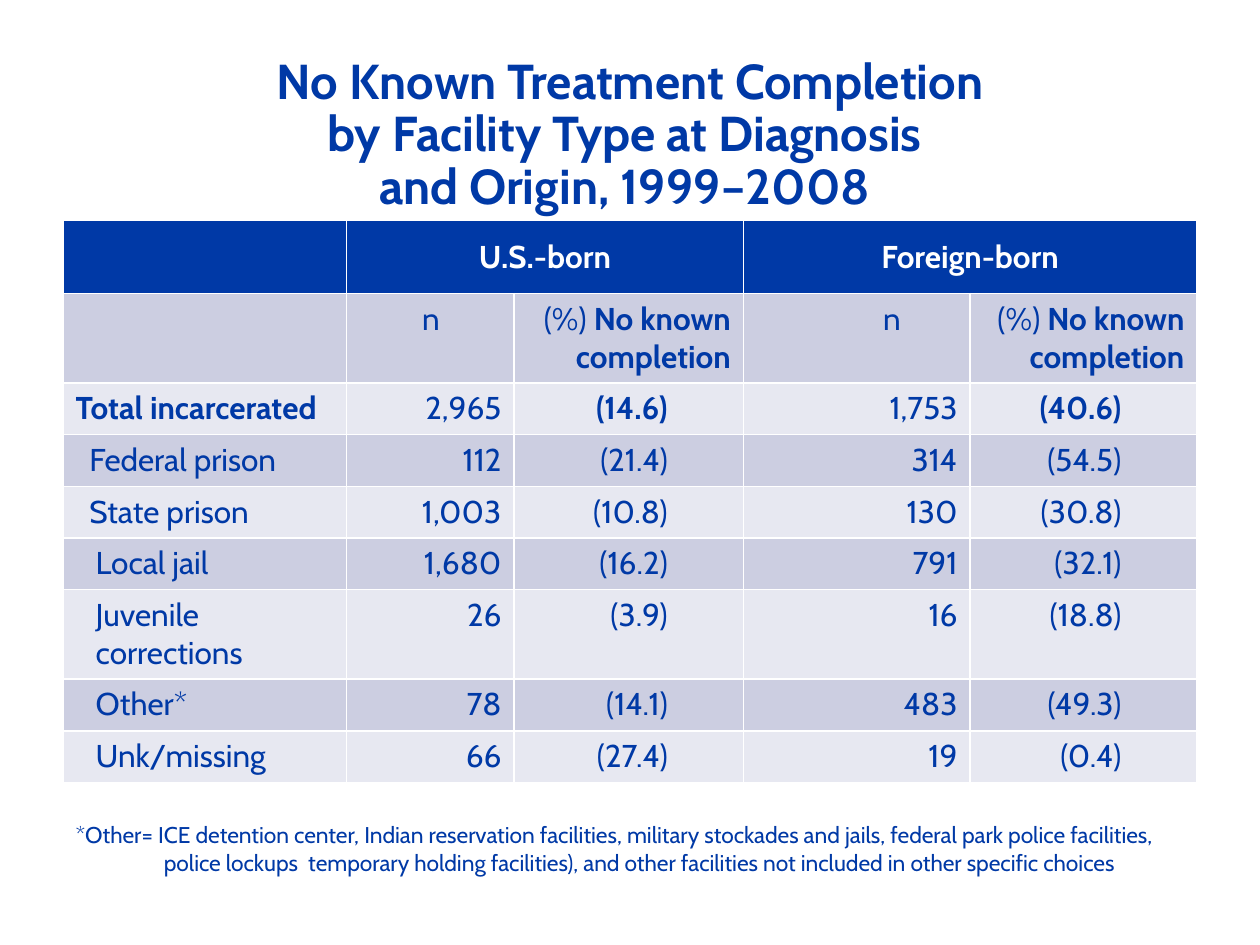
"""Build a slide with a table of treatment completion by facility type and origin."""
from dataclasses import dataclass

from lxml.etree import SubElement
from pptx import Presentation
from pptx.dml.color import RGBColor as RGB
from pptx.enum.text import MSO_ANCHOR as Anchor, MSO_AUTO_SIZE as AutoSize, PP_ALIGN as Align
from pptx.oxml.ns import qn
from pptx.util import Inches, Pt


@dataclass(frozen=True)
class Theme:
    """Colours, font and type sizes of the slide."""
    font: str = "Cabin"
    blue: RGB = RGB(0x00, 0x39, 0xA6)
    white: RGB = RGB(0xFF, 0xFF, 0xFF)
    dark_band: RGB = RGB(0xCC, 0xCE, 0xE1)
    light_band: RGB = RGB(0xE7, 0xE8, 0xF1)
    title: Pt = Pt(28)
    title_leading: Pt = Pt(30)
    table: Pt = Pt(18)
    footnote: Pt = Pt(13)


THEME = Theme()
LEFT, WIDTH = 0.5, 9
PAD = 0.1
PERCENT_PAD = 0.6
COLUMN_WIDTHS = [2.25, 1.33, 1.82, 1.8, 1.8]
ROW_HEIGHTS = [0.58, 0.7] + [0.41] * 4 + [0.7] + [0.41] * 2

TITLE = "No Known Treatment Completion\vby Facility Type at Diagnosis \vand Origin, 1999–2008 "
FOOTNOTE = (
    "*Other= ICE detention center, Indian reservation facilities, military stockades"
    " and jails, federal park police facilities, \v"
    "police lockups  temporary holding facilities), and other facilities"
    " not included in other specific choices"
)
ORIGINS = [("U.S.-born", 1, 0.6), ("Foreign-born", 3, 1.11)]
FACILITIES = [
    ("Total incarcerated", 0, "2,965", "(14.6)", "1,753", "(40.6)"),
    ("Federal prison", 0.11, "112", "(21.4)", "314", "(54.5)"),
    ("State prison", 0.11, "1,003", "(10.8)", "130", "(30.8)"),
    ("Local jail", 0.16, "1,680", "(16.2)", "791", "(32.1)"),
    ("Juvenile\ncorrections", 0.16, "26", "(3.9)", "16", "(18.8)"),
    ("Other*", 0.16, "78", "(14.1)", "483", "(49.3)"),
    ("Unk/missing", 0.16, "66", "(27.4)", "19", "(0.4)"),
]


def style_font(paragraph, size, color=THEME.blue, bold=False):
    """Apply the theme font to a whole paragraph."""
    font = paragraph.font
    font.name, font.size, font.bold = THEME.font, size, bold
    font.color.rgb = color


def place_text(placeholder, text, top, height):
    """Move and fill a placeholder, and return its only paragraph."""
    placeholder.left, placeholder.width = Inches(LEFT), Inches(WIDTH)
    placeholder.top, placeholder.height = Inches(top), Inches(height)
    frame = placeholder.text_frame
    frame.text = text
    frame.word_wrap = True
    frame.auto_size = AutoSize.NONE
    frame.vertical_anchor = Anchor.BOTTOM
    return frame.paragraphs[0]


def add_title(slide):
    """Fill the title placeholder."""
    heading = place_text(slide.shapes.title, TITLE, 0.5, 1.25)
    heading.alignment = Align.CENTER
    heading.line_spacing = THEME.title_leading
    style_font(heading, THEME.title, bold=True)


def add_footnote(slide):
    """Fill the body placeholder with the hanging footnote."""
    note = place_text(slide.placeholders[1], FOOTNOTE, 6.33, 0.67)
    note.space_before = Pt(0)
    properties = note._p.get_or_add_pPr()
    hang = Inches(0.7)
    properties.set("marL", str(hang))
    properties.set("indent", str(-hang))
    SubElement(properties, qn("a:buNone"))
    style_font(note, THEME.footnote)


def fill_cell(cell, text, align=Align.LEFT, color=THEME.blue, bold=False, left=PAD, right=PAD):
    """Write one table cell with its alignment and side margins."""
    cell.margin_left, cell.margin_right = Inches(left), Inches(right)
    cell.text = text
    for paragraph in cell.text_frame.paragraphs:
        paragraph.alignment = align
        style_font(paragraph, THEME.table, color, bold)


def add_origin_headers(table):
    """Write the two heading rows for each origin."""
    for origin, column, count_indent in ORIGINS:
        group = table.cell(0, column)
        group.merge(table.cell(0, column + 1))
        fill_cell(group, origin, Align.CENTER, THEME.white, bold=True)
        group.vertical_anchor = Anchor.MIDDLE
        fill_cell(table.cell(1, column), "n", left=count_indent)
        rate = table.cell(1, column + 1)
        fill_cell(rate, "(%) ", Align.RIGHT)
        measure = rate.text_frame.paragraphs[0].add_run()
        measure.text = "No known completion"
        measure.font.bold = True


def add_facility_row(table, row, facility):
    """Write the label, counts and percentages of one facility type."""
    label, indent, *values = facility
    is_total = row == 2
    fill_cell(table.cell(row, 0), label, bold=is_total, left=PAD + indent)
    for column, value in enumerate(values, 1):
        is_percent = column % 2 == 0
        fill_cell(table.cell(row, column), value, Align.RIGHT,
                  bold=is_total and is_percent,
                  right=PERCENT_PAD if is_percent else PAD)


def add_completion_table(slide):
    """Add the banded table of counts and percentages."""
    table = slide.shapes.add_table(
        len(ROW_HEIGHTS), len(COLUMN_WIDTHS), Inches(LEFT), Inches(1.75),
        Inches(WIDTH), Inches(sum(ROW_HEIGHTS))).table
    for column, width in zip(table.columns, COLUMN_WIDTHS):
        column.width = Inches(width)
    for index, (row, height) in enumerate(zip(table.rows, ROW_HEIGHTS)):
        row.height = Inches(height)
        band = THEME.dark_band if index % 2 else THEME.light_band
        for cell in row.cells:
            cell.fill.solid()
            cell.fill.fore_color.rgb = band if index else THEME.blue
    add_origin_headers(table)
    for row, facility in enumerate(FACILITIES, 2):
        add_facility_row(table, row, facility)


def main():
    """Build and save the slide."""
    deck = Presentation()
    deck.slide_width, deck.slide_height = Inches(10), Inches(7.5)
    slide = deck.slides.add_slide(deck.slide_layouts[1])
    add_title(slide)
    add_completion_table(slide)
    add_footnote(slide)
    deck.save("out.pptx")


if __name__ == "__main__":
    main()
